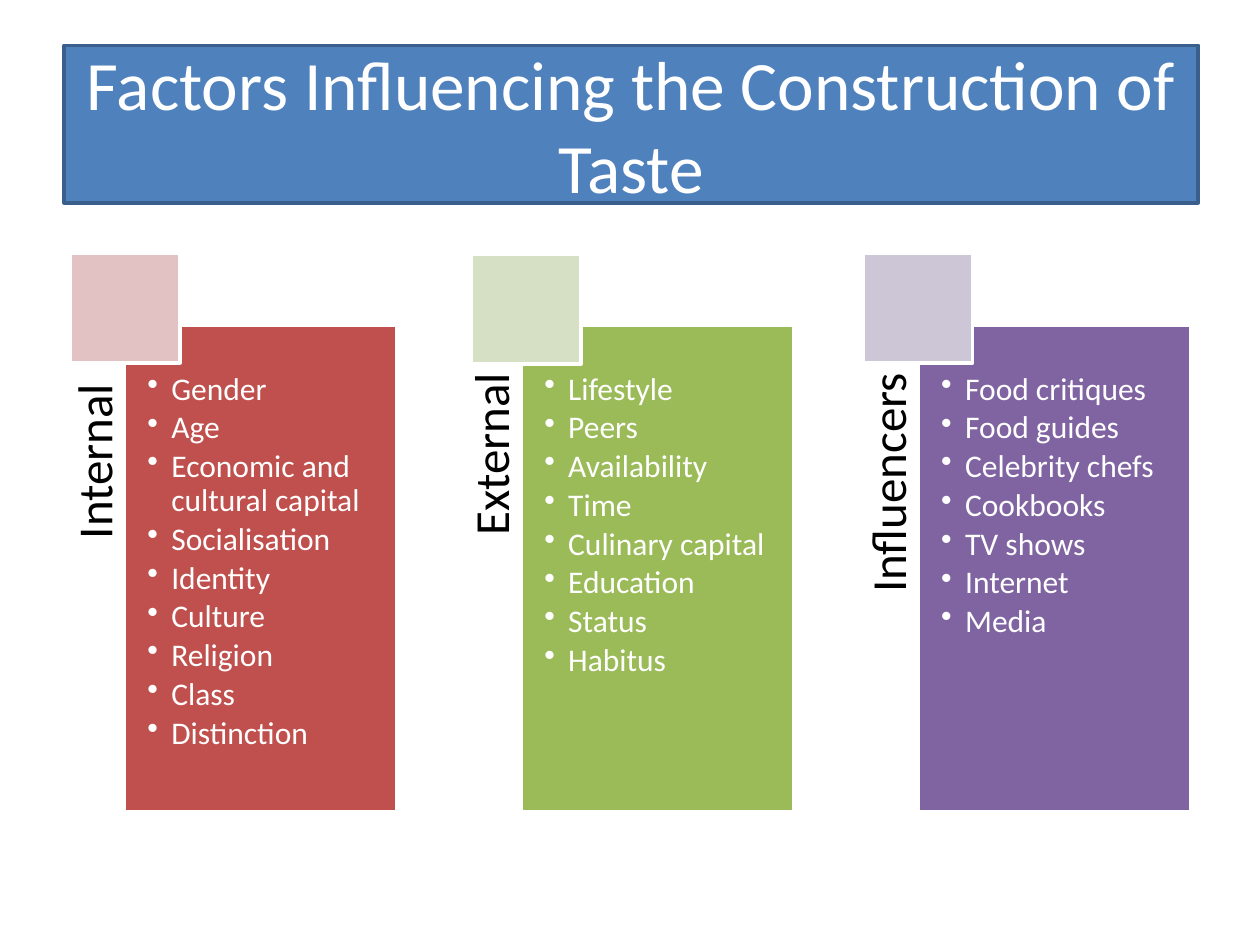
from pptx import Presentation
from pptx.dml.color import RGBColor
from pptx.enum.shapes import MSO_SHAPE as Shape
from pptx.enum.text import MSO_ANCHOR as Anchor, MSO_AUTO_SIZE as AutoSize, PP_ALIGN as Align
from pptx.oxml.ns import qn
from pptx.util import Inches, Pt
from lxml.etree import SubElement

WHITE = RGBColor(0xFF, 0xFF, 0xFF)
BLACK = RGBColor(0x00, 0x00, 0x00)
BLUE = RGBColor(0x4F, 0x81, 0xBD)
DARK_BLUE = RGBColor(0x3A, 0x5F, 0x8C)
RED = RGBColor(0xC0, 0x50, 0x4D)
PALE_RED = RGBColor(0xE2, 0xC2, 0xC2)
GREEN = RGBColor(0x9B, 0xBB, 0x59)
PALE_GREEN = RGBColor(0xD5, 0xE0, 0xC4)
PURPLE = RGBColor(0x80, 0x64, 0xA2)
PALE_PURPLE = RGBColor(0xCD, 0xC6, 0xD7)

FACTORS = [
    ("Internal ", RED, PALE_RED, (5.6, 20.1),
     ["Gender", "Age", "Economic and cultural capital", "Socialisation", "Identity",
      "Culture", "Religion", "Class", "Distinction"]),
    ("External", GREEN, PALE_GREEN, (37.4, 20.2),
     ["Lifestyle", "Peers", "Availability", "Time", "Culinary capital", "Education",
      "Status", "Habitus"]),
    ("Influencers", PURPLE, PALE_PURPLE, (68.5, 20.1),
     ["Food critiques", "Food guides", "Celebrity chefs", "Cookbooks", "TV shows",
      "Internet", "Media"]),
]
PANEL_LEFT, PANEL_TOP, PANEL_WIDTH, PANEL_HEIGHT = 9.9, 25.8, 21.6, 38.6
PANEL_PITCH = 31.5
LABEL_HEIGHT, LABEL_CENTRE = 4.3, -2.2
SQUARE = 8.7


class FactorSlide:
    """Draws the slide on a grid of 100 columns by 75 rows in one shared style."""

    font = "Calibri"
    outline = Pt(2)

    def __init__(self, presentation):
        self.cell = presentation.slide_width / 100
        self.slide = presentation.slides.add_slide(presentation.slide_layouts[5])

    def grid(self, *cells):
        return [round(cell * self.cell) for cell in cells]

    def paint(self, shape, fill, line):
        shape.fill.solid()
        shape.fill.fore_color.rgb = fill
        shape.line.color.rgb = line
        shape.line.width = self.outline

    def format_text(self, paragraph, size, color, align):
        paragraph.alignment = align
        for run in paragraph.runs:
            run.font.name = self.font
            run.font.size = Pt(size)
            run.font.color.rgb = color

    def set_margins(self, frame, left, top, right, bottom):
        frame.margin_left, frame.margin_top = Inches(left), Inches(top)
        frame.margin_right, frame.margin_bottom = Inches(right), Inches(bottom)

    def title(self, text, *cells):
        title = self.slide.shapes.title
        title.left, title.top, title.width, title.height = self.grid(*cells)
        self.paint(title, BLUE, DARK_BLUE)
        frame = title.text_frame
        frame.text = text
        frame.auto_size = AutoSize.NONE
        frame.vertical_anchor = Anchor.MIDDLE
        self.format_text(frame.paragraphs[0], 39.6, WHITE, Align.CENTER)

    def rectangle(self, fill, *cells):
        shape = self.slide.shapes.add_shape(Shape.RECTANGLE, *self.grid(*cells))
        shape.shadow.inherit = False
        self.paint(shape, fill, WHITE)
        return shape

    def vertical_label(self, text, centre_x, centre_y, length, height):
        box = self.slide.shapes.add_textbox(
            *self.grid(centre_x - length / 2, centre_y - height / 2, length, height))
        box.rotation = 270
        frame = box.text_frame
        frame.word_wrap = True
        self.set_margins(frame, 0, 0, 0.38, 0)
        frame.text = text
        paragraph = frame.paragraphs[0]
        paragraph.line_spacing = 0.9
        self.format_text(paragraph, 28, BLACK, Align.RIGHT)

    def bullet_panel(self, items, fill, *cells):
        frame = self.rectangle(fill, *cells).text_frame
        frame.word_wrap = True
        frame.vertical_anchor = Anchor.TOP
        self.set_margins(frame, 0.18, 0.38, 0.18, 0.18)
        frame.text = "\n".join(items)
        for paragraph in frame.paragraphs:
            paragraph.level = 1
            paragraph.line_spacing = 0.9
            paragraph.space_after = Pt(2.7)
            self.format_text(paragraph, 18, WHITE, Align.LEFT)
            properties = paragraph._p.get_or_add_pPr()
            properties.set("marL", str(Inches(0.19)))
            properties.set("indent", str(-Inches(0.19)))
            SubElement(properties, qn("a:buChar")).set("char", "•")


def main():
    presentation = Presentation()
    presentation.slide_width, presentation.slide_height = Inches(10), Inches(7.5)
    page = FactorSlide(presentation)
    page.title("Factors Influencing the Construction of Taste", 5.1, 3.6, 90, 12.5)
    for index, (label, color, pale, corner, items) in enumerate(FACTORS):
        left = PANEL_LEFT + index * PANEL_PITCH
        page.vertical_label(label, left + LABEL_CENTRE, PANEL_TOP + PANEL_HEIGHT / 2,
                            PANEL_HEIGHT, LABEL_HEIGHT)
        page.bullet_panel(items, color, left, PANEL_TOP, PANEL_WIDTH, PANEL_HEIGHT)
        page.rectangle(pale, *corner, SQUARE, SQUARE)
    presentation.save("out.pptx")


if __name__ == "__main__":
    main()
